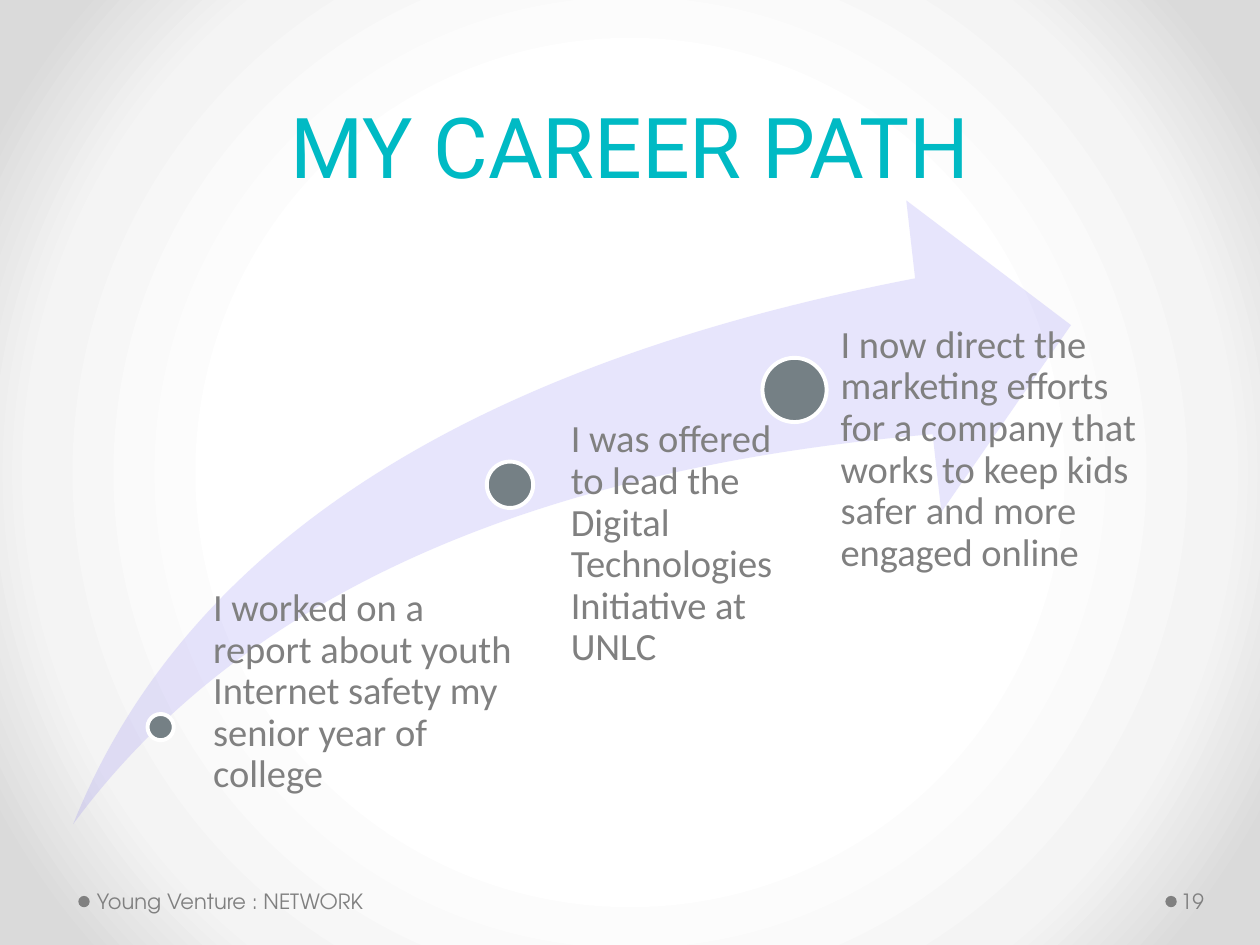
import pptx
import pptx.util
import pptx.oxml
import pptx.oxml.ns
import pptx.dml.color
import pptx.enum.shapes
import pptx.enum.text

Pt = pptx.util.Pt
RGB = pptx.dml.color.RGBColor
KIND = pptx.enum.shapes.MSO_SHAPE
ALIGN = pptx.enum.text.PP_ALIGN
ANCHOR = pptx.enum.text.MSO_ANCHOR

TEAL = RGB(0x00, 0xBA, 0xC4)
GRAY = RGB(0x80, 0x80, 0x80)
SLATE = RGB(0x75, 0x80, 0x85)
VIOLET = RGB(0x59, 0x48, 0xEF)
WHITE = RGB(0xFF, 0xFF, 0xFF)
PALE = RGB(0xF4, 0xF4, 0xF4)
SILVER = RGB(0xDA, 0xDA, 0xDA)

STEPS = [
    ("I worked on a report about youth Internet safety my senior year of college",
     (91.8, 415.5, 15), (113.8, 336.2, 179.3, 149), 8),
    ("I was offered to lead the Digital Technologies Initiative at UNLC",
     (291.4, 277, 26.5), (311.8, 239.8, 136.8, 193.7), 14.4),
    ("I now direct the marketing efforts for a company that works to keep kids "
     "safer and more engaged online",
     (454, 222.8, 36.7), (460.8, 185.8, 199.4, 247.7), 19.6),
]


def paint(slide):
    slide.background.fill.solid()
    solid = slide.background._cSld.find(".//" + pptx.oxml.ns.qn("a:solidFill"))
    stops = "".join(
        f'<a:gs pos="{at * 1000}"><a:srgbClr val="{hue}"/></a:gs>'
        for at, hue in ((50, WHITE), (76, PALE), (92, SILVER)))
    grad = pptx.oxml.parse_xml(
        f'<a:gradFill {pptx.oxml.ns.nsdecls("a")} rotWithShape="1">'
        f'<a:gsLst>{stops}</a:gsLst><a:path path="circle">'
        '<a:fillToRect l="50000" t="50000" r="50000" b="50000"/>'
        '</a:path></a:gradFill>')
    solid.getparent().replace(solid, grad)


def place(shape, box):
    shape.left, shape.top, shape.width, shape.height = map(Pt, box)


def write(shape, text, font="Calibri", size=22, color=GRAY, align=ALIGN.LEFT,
          anchor=ANCHOR.TOP, space=None, inset=(0, 0, 0, 0)):
    frame = shape.text_frame
    frame.word_wrap = True
    frame.auto_size = pptx.enum.text.MSO_AUTO_SIZE.NONE
    frame.vertical_anchor = anchor
    (frame.margin_left, frame.margin_top,
     frame.margin_right, frame.margin_bottom) = map(Pt, inset)
    para = frame.paragraphs[0]
    para.alignment = align
    if space:
        para.line_spacing = space
    run = para.add_run()
    run.text = text
    run.font.name = font
    run.font.size = Pt(size)
    run.font.color.rgb = color


def label(slide, text, box, **style):
    write(slide.shapes.add_textbox(*map(Pt, box)), text, **style)


def draw(slide, kind, box, fill):
    shape = slide.shapes.add_shape(kind, *map(Pt, box))
    shape.shadow.inherit = False
    shape.fill.solid()
    shape.fill.fore_color.rgb = fill
    shape.line.fill.background()
    return shape


def dot(slide, x, y, size, fill):
    box = (x - size / 2, y - size / 2, size, size)
    return draw(slide, KIND.OVAL, box, fill)


def swoosh(slide):
    arrow = draw(slide, KIND.SWOOSH_ARROW, (41.8, 114.5, 570.2, 356.4), VIOLET)
    arrow.adjustments[0] = 0.25
    arrow.adjustments[1] = 0.25
    hue = arrow.fill._xPr.find(".//" + pptx.oxml.ns.qn("a:srgbClr"))
    hue.append(pptx.oxml.parse_xml(
        f'<a:alpha {pptx.oxml.ns.nsdecls("a")} val="14000"/>'))


def step(slide, text, mark, box, left):
    ring = dot(slide, *mark, SLATE)
    ring.line.color.rgb = WHITE
    ring.line.width = Pt(2.25)
    label(slide, text, box, space=0.9, inset=(left, 0, 0, 0))


def foot(slide, text, x, box, inset):
    dot(slide, x, 515.2, 6.5, GRAY)
    label(slide, text, box, font="TeX Gyre Adventor", size=12,
          anchor=ANCHOR.MIDDLE, inset=inset)


def main():
    deck = pptx.Presentation()
    deck.slide_width, deck.slide_height = Pt(720), Pt(540)
    slide = deck.slides.add_slide(deck.slide_layouts[5])
    paint(slide)
    title = slide.shapes.title
    place(title, (36, 10.8, 648, 104.4))
    write(title, "MY CAREER PATH", font="Roboto", size=48, color=TEAL,
          align=ALIGN.CENTER, anchor=ANCHOR.BOTTOM, space=Pt(58),
          inset=(7.2, 3.6, 7.2, 3.6))
    swoosh(slide)
    for item in STEPS:
        step(slide, *item)
    foot(slide, "Young Venture : NETWORK", 48, (51.8, 500.4, 224, 28.8),
         (3.6, 3.6, 7.2, 3.6))
    foot(slide, "19", 669.2, (672.5, 500.4, 43.9, 28.8), (2.2, 3.6, 3.6, 3.6))
    deck.save("out.pptx")


if __name__ == "__main__":
    main()
